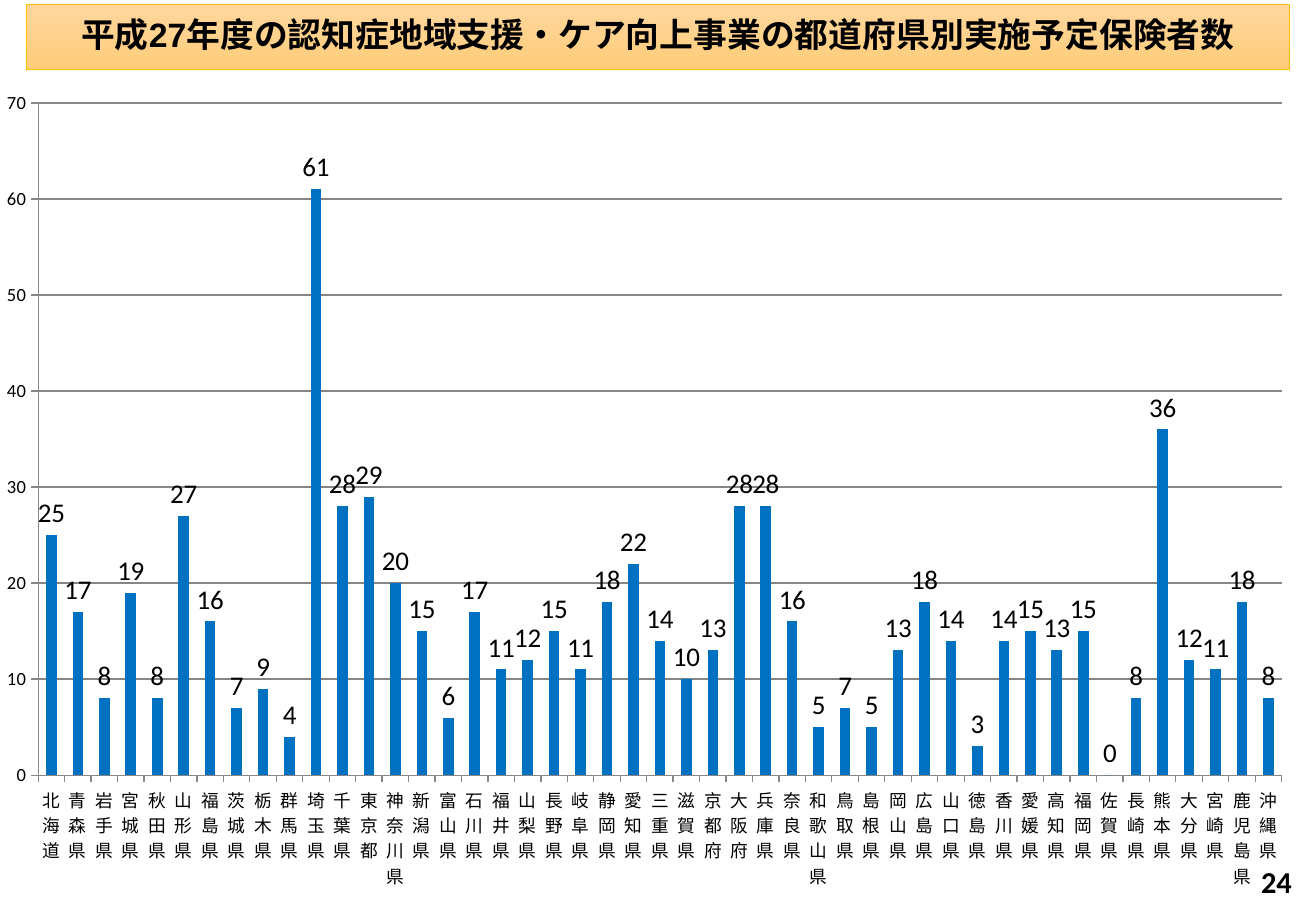
from dataclasses import dataclass

from pptx import Presentation
from pptx import util as u
from pptx.chart import data as cd
from pptx.dml import color
from pptx.enum import chart as ec, shapes, text
from pptx.oxml import parse_xml
from pptx.oxml.ns import nsdecls, qn


@dataclass(frozen=True)
class Theme:
    black: str = "000000"
    bar: str = "0070C0"
    grid: str = "868686"
    banner_top: str = "FFD79D"
    banner_bottom: str = "FFCC7A"
    banner_line: str = "FFC000"
    heading_font: str = "Arial"
    body_font: str = "Calibri"
    title_size: float = 20
    page_size: float = 18
    label_size: float = 16
    value_size: float = 11
    category_size: float = 10.5


THEME = Theme()
TITLE = "平成27年度の認知症地域支援・ケア向上事業の都道府県別実施予定保険者数"
PLOT_AREA = {"x": 0.029, "y": 0.115, "w": 0.945, "h": 0.751}
INSURERS = {
    "北海道": 25, "青森県": 17, "岩手県": 8, "宮城県": 19, "秋田県": 8,
    "山形県": 27, "福島県": 16, "茨城県": 7, "栃木県": 9, "群馬県": 4,
    "埼玉県": 61, "千葉県": 28, "東京都": 29, "神奈川県": 20, "新潟県": 15,
    "富山県": 6, "石川県": 17, "福井県": 11, "山梨県": 12, "長野県": 15,
    "岐阜県": 11, "静岡県": 18, "愛知県": 22, "三重県": 14, "滋賀県": 10,
    "京都府": 13, "大阪府": 28, "兵庫県": 28, "奈良県": 16, "和歌山県": 5,
    "鳥取県": 7, "島根県": 5, "岡山県": 13, "広島県": 18, "山口県": 14,
    "徳島県": 3, "香川県": 14, "愛媛県": 15, "高知県": 13, "福岡県": 15,
    "佐賀県": 0, "長崎県": 8, "熊本県": 36, "大分県": 12, "宮崎県": 11,
    "鹿児島県": 18, "沖縄県": 8,
}


def rgb(value):
    return color.RGBColor.from_string(value)


def box(*lengths):
    return [u.Inches(n) for n in lengths]


def apply(obj, values):
    for name, value in values.items():
        setattr(obj, name, value)


def style_font(font, size, name=THEME.body_font, bold=False):
    apply(font, {"size": u.Pt(size), "name": name, "bold": bold})
    font.color.rgb = rgb(THEME.black)


def style_line(line, value):
    line.color.rgb = rgb(value)
    line.width = u.Pt(0.75)


def write(sp, content, align, size, font):
    tf = sp.text_frame
    p = tf.paragraphs[0]
    p.alignment = align
    r = p.add_run()
    r.text = content
    style_font(r.font, size, font, True)
    return tf, p


def add_banner(slide):
    sp = slide.shapes.add_shape(
        shapes.MSO_SHAPE.RECTANGLE, *box(0.22, 0.04, 10.39, 0.53))
    sp.shadow.inherit = False
    sp.fill.gradient()
    sp.fill.gradient_angle = 270
    stops = (THEME.banner_top, THEME.banner_bottom)
    for stop, value in zip(sp.fill.gradient_stops, stops):
        stop.color.rgb = rgb(value)
    style_line(sp.line, THEME.banner_line)
    tf, p = write(sp, TITLE, text.PP_ALIGN.CENTER,
                  THEME.title_size, THEME.heading_font)
    apply(tf, {"word_wrap": True, "vertical_anchor": text.MSO_ANCHOR.MIDDLE})
    p.line_spacing = 0.9


def add_page_number(slide):
    sp = slide.shapes.add_textbox(*box(9.62, 7.06, 1.11, 0.4))
    tf, _ = write(sp, "24", text.PP_ALIGN.RIGHT,
                  THEME.page_size, THEME.body_font)
    tf.word_wrap = True


def place_plot(chart):
    places = "".join(f'<c:{k}Mode val="edge"/>' for k in "xy")
    places += "".join(f'<c:{k} val="{v}"/>' for k, v in PLOT_AREA.items())
    layout = parse_xml(
        f'<c:layout {nsdecls("c")}><c:manualLayout>'
        f'<c:layoutTarget val="inner"/>{places}</c:manualLayout></c:layout>')
    area = chart._chartSpace.chart.plotArea
    for old in area.findall(qn("c:layout")):
        area.remove(old)
    area.insert(0, layout)


def style_axes(chart):
    sizes = ((chart.category_axis, THEME.category_size),
             (chart.value_axis, THEME.value_size))
    for axis, size in sizes:
        axis.major_tick_mark = ec.XL_TICK_MARK.OUTSIDE
        style_font(axis.tick_labels.font, size)
        style_line(axis.format.line, THEME.grid)
    apply(chart.value_axis, {"minimum_scale": 0, "maximum_scale": 70,
                             "major_unit": 10, "has_major_gridlines": True})
    style_line(chart.value_axis.major_gridlines.format.line, THEME.grid)
    body = chart.category_axis._element.find(
        f'{qn("c:txPr")}/{qn("a:bodyPr")}')
    body.set("rot", "0")
    body.set("vert", "wordArtVert")


def add_insurer_chart(slide):
    data = cd.CategoryChartData()
    data.categories = INSURERS.keys()
    data.add_series("実施予定保険者数", INSURERS.values())
    chart = slide.shapes.add_chart(
        ec.XL_CHART_TYPE.COLUMN_CLUSTERED, *box(0, 0, 10.83, 7.37), data).chart
    apply(chart, {"has_legend": False, "has_title": False})
    style_font(chart.font, THEME.page_size)
    plot = chart.plots[0]
    apply(plot, {"gap_width": 150, "vary_by_categories": False,
                 "has_data_labels": True})
    apply(plot.data_labels, {"show_value": True,
                             "position": ec.XL_LABEL_POSITION.OUTSIDE_END})
    style_font(plot.data_labels.font, THEME.label_size)
    fill = plot.series[0].format.fill
    fill.solid()
    fill.fore_color.rgb = rgb(THEME.bar)
    style_axes(chart)
    place_plot(chart)


def main():
    prs = Presentation()
    apply(prs, {"slide_width": u.Inches(10.83),
                "slide_height": u.Inches(7.5)})
    slide = prs.slides.add_slide(prs.slide_layouts[6])
    add_insurer_chart(slide)
    add_banner(slide)
    add_page_number(slide)
    prs.save("out.pptx")


if __name__ == "__main__":
    main()
